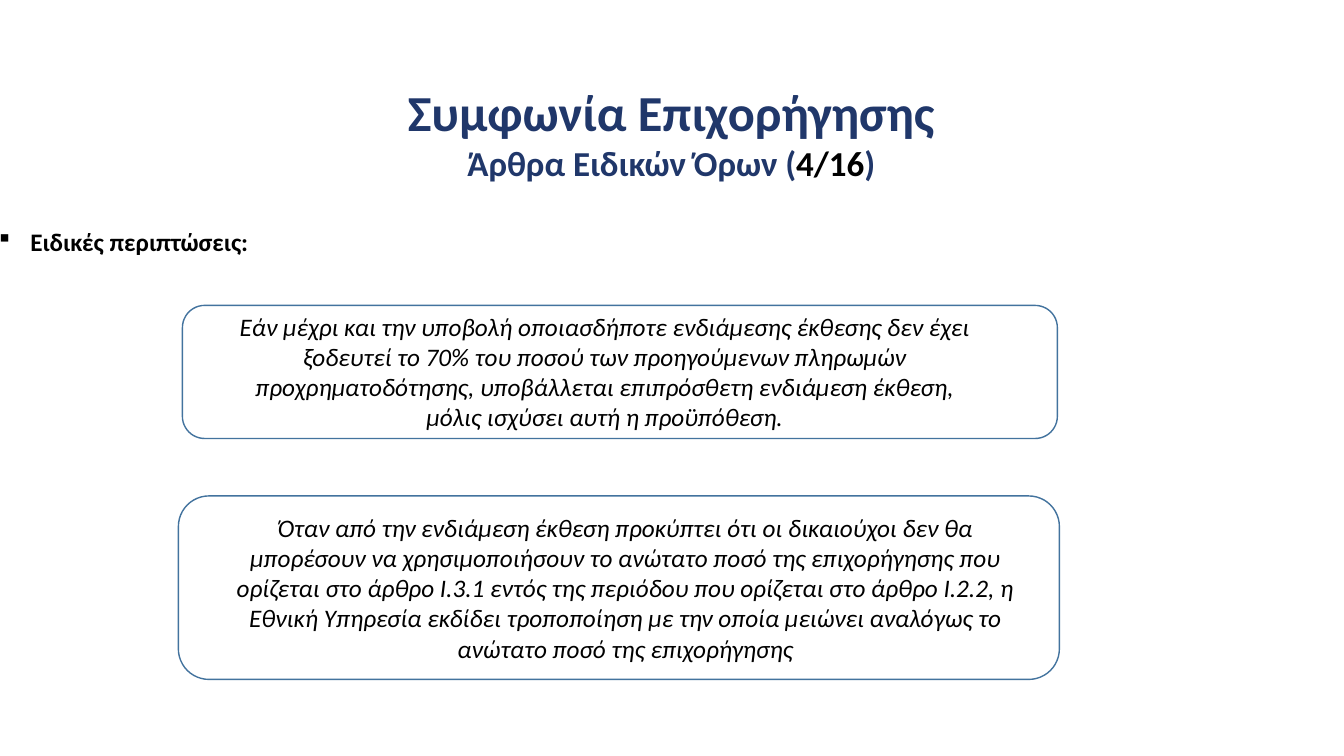
import dataclasses

import pptx
import pptx.dml.color
import pptx.enum.shapes
import pptx.enum.text
import pptx.util
import lxml.etree

Pt = pptx.util.Pt
Align = pptx.enum.text.PP_ALIGN
Anchor = pptx.enum.text.MSO_ANCHOR


@dataclasses.dataclass(frozen=True)
class Theme:
    font: str = "Calibri"
    navy: str = "20376A"
    black: str = "000000"
    outline: str = "43739E"
    title_size: int = 36
    subtitle_size: int = 25
    body_size: int = 18


theme = Theme()


def write(para, text, size=theme.body_size, color=theme.black, bold=False, italic=False, align=Align.CENTER):
    para.alignment = align
    span = para.add_run()
    span.text = text
    span.font.name = theme.font
    span.font.size = Pt(size)
    span.font.bold = bold
    span.font.italic = italic
    span.font.color.rgb = pptx.dml.color.RGBColor.from_string(color)


deck = pptx.Presentation()
deck.slide_width = Pt(960)
deck.slide_height = Pt(540)
page = deck.slides.add_slide(deck.slide_layouts[5])

title = page.shapes.title
title.left, title.top, title.width, title.height = Pt(162), Pt(51.84), Pt(635.04), Pt(84.96)
title_frame = title.text_frame
title_frame.auto_size = pptx.enum.text.MSO_AUTO_SIZE.NONE
title_frame.vertical_anchor = Anchor.MIDDLE
write(title_frame.paragraphs[0], "Συμφωνία Επιχορήγησης", size=theme.title_size, color=theme.navy, bold=True)
subtitle = title_frame.add_paragraph()
for text, color in (("Άρθρα Ειδικών Όρων (", theme.navy), ("4/16", theme.black), (")", theme.navy)):
    write(subtitle, text, size=theme.subtitle_size, color=color, bold=True)

heading = page.shapes.add_textbox(Pt(-7.92), Pt(158.4), Pt(629.28), Pt(345.6))
heading.text_frame.word_wrap = True
heading_para = heading.text_frame.paragraphs[0]
properties = heading_para._p.get_or_add_pPr()
properties.set("marL", str(Pt(22.5)))
properties.set("indent", str(Pt(-22.5)))
bullet_font = lxml.etree.SubElement(properties, pptx.oxml.ns.qn("a:buFont"))
bullet_font.set("typeface", "Wingdings")
bullet = lxml.etree.SubElement(properties, pptx.oxml.ns.qn("a:buChar"))
bullet.set("char", "§")
write(heading_para, "Ειδικές περιπτώσεις:", bold=True, align=Align.JUSTIFY)

cases = (
    (
        (130.32, 218.16, 624.96, 95.04),
        (154.08, 218.5, 555.84, 94.7),
        "Εάν μέχρι και την υποβολή οποιασδήποτε ενδιάμεσης έκθεσης δεν έχει ξοδευτεί το 70% του ποσού "
        "των προηγούμενων πληρωμών προχρηματοδότησης, υποβάλλεται επιπρόσθετη ενδιάμεση έκθεση, "
        "μόλις ισχύσει αυτή η προϋπόθεση.",
    ),
    (
        (127.44, 354.24, 629.28, 131.04),
        (160.56, 362.16, 572.4, 116.64),
        "Όταν από την ενδιάμεση έκθεση προκύπτει ότι οι δικαιούχοι δεν θα μπορέσουν να χρησιμοποιήσουν "
        "το ανώτατο ποσό της επιχορήγησης που ορίζεται στο άρθρο I.3.1 εντός της περιόδου που ορίζεται "
        "στο άρθρο I.2.2, η Εθνική Υπηρεσία εκδίδει τροποποίηση με την οποία μειώνει αναλόγως το "
        "ανώτατο ποσό της επιχορήγησης",
    ),
)
for frame_area, text_area, text in cases:
    frame = page.shapes.add_shape(pptx.enum.shapes.MSO_SHAPE.ROUNDED_RECTANGLE, *map(Pt, frame_area))
    frame.shadow.inherit = False
    frame.fill.background()
    frame.line.color.rgb = pptx.dml.color.RGBColor.from_string(theme.outline)
    frame.line.width = Pt(1)
    box = page.shapes.add_textbox(*map(Pt, text_area))
    box.text_frame.word_wrap = True
    write(box.text_frame.paragraphs[0], text, italic=True)

deck.save("out.pptx")
